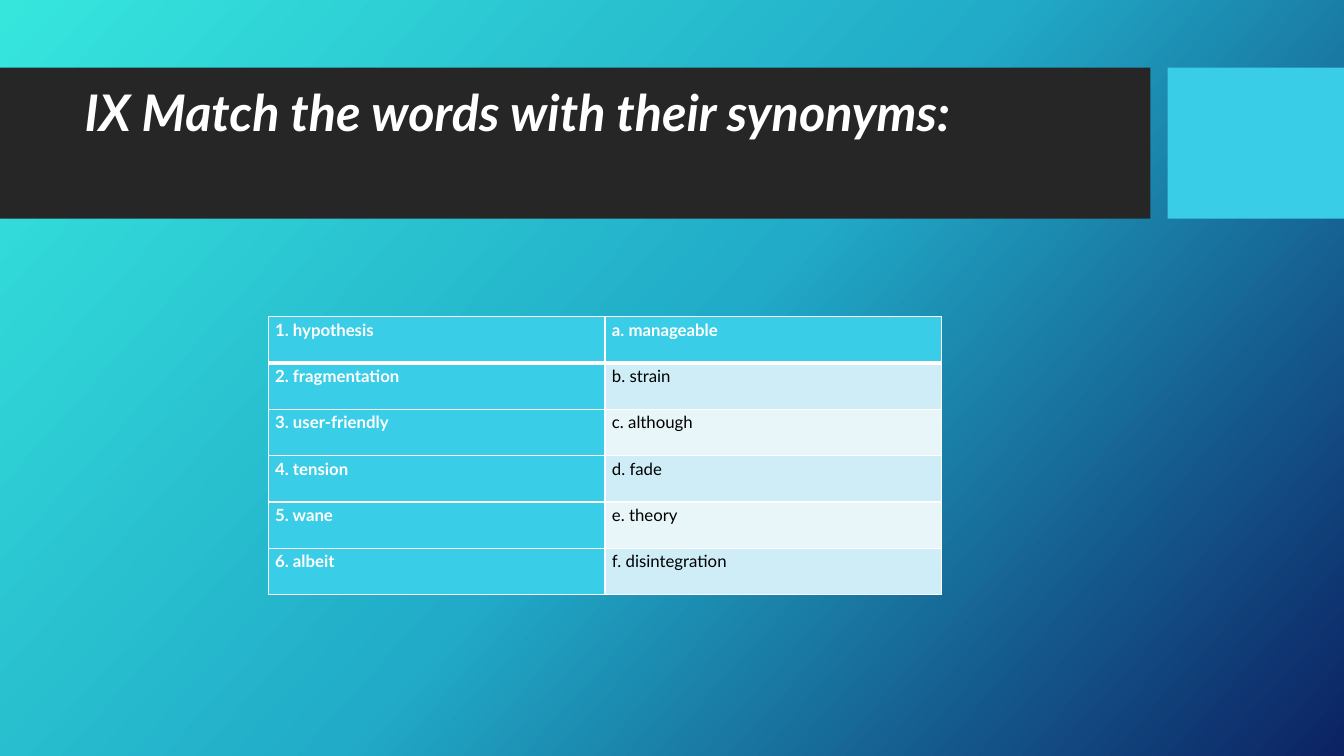
import copy

import pptx
import pptx.dml.color
import pptx.enum.shapes
import pptx.enum.text
import pptx.oxml
import pptx.oxml.ns
import pptx.util

Inches = pptx.util.Inches
FONT = "Lato"
CYAN = "39CDE7"
WHITE = "FFFFFF"
PAIRS = [
    ("1. hypothesis", "a. manageable"),
    ("2. fragmentation", "b. strain"),
    ("3. user-friendly", "c. although"),
    ("4. tension", "d. fade"),
    ("5. wane", "e. theory"),
    ("6. albeit", "f. disintegration"),
]


def rgb(value):
    return pptx.dml.color.RGBColor.from_string(value)


def format_text(p, size, color, bold, spacing, italic=False):
    p.alignment = pptx.enum.text.PP_ALIGN.LEFT
    p.line_spacing = spacing
    p.font.name = FONT
    p.font.size = pptx.util.Pt(size)
    p.font.bold = bold
    p.font.italic = italic
    p.font.color.rgb = rgb(color)


def paint_background(s):
    fill = s.background.fill
    fill.gradient()
    fill.gradient_angle = 318
    stops = s.element.find(".//" + pptx.oxml.ns.qn("a:gsLst"))
    stops.insert(1, copy.deepcopy(stops[0]))
    colors = ["36E6DD", "21ABC8", "0C2263"]
    for stop, position, color in zip(fill.gradient_stops, (0, 0.5, 1), colors):
        stop.position = position
        stop.color.rgb = rgb(color)


def add_block(s, left, top, width, height, color):
    sp = s.shapes.add_shape(
        pptx.enum.shapes.MSO_SHAPE.RECTANGLE,
        Inches(left), Inches(top), Inches(width), Inches(height))
    sp.shadow.inherit = False
    sp.fill.solid()
    sp.fill.fore_color.rgb = rgb(color)
    sp.line.fill.background()
    return sp


def add_header(s, left, top, width, height, text):
    accent, gap = 1.75, 0.17
    band = width - accent - gap
    title = s.shapes.title
    blocks = [
        add_block(s, left, top, band, height, "262626"),
        add_block(s, left + width - accent, top, accent, height, CYAN),
    ]
    for block in blocks:
        title.element.addprevious(block.element)
    title.left, title.top = Inches(left + 0.74), Inches(top + 0.15)
    title.width, title.height = Inches(band - 0.9), Inches(1.18)
    tf = title.text_frame
    tf.text = text
    tf.word_wrap = True
    tf.auto_size = pptx.enum.text.MSO_AUTO_SIZE.NONE
    tf.vertical_anchor = pptx.enum.text.MSO_ANCHOR.TOP
    format_text(tf.paragraphs[0], 36, WHITE, True, 0.9, italic=True)


def set_borders(cell, widths):
    props = cell._tc.get_or_add_tcPr()
    for i, (side, width) in enumerate(widths.items()):
        props.insert(i, pptx.oxml.parse_xml(
            f'<a:{side} {pptx.oxml.ns.nsdecls("a")} w="{pptx.util.Pt(width)}">'
            f'<a:solidFill><a:srgbClr val="{WHITE}"/></a:solidFill></a:{side}>'))


def add_matching_table(s, left, top, width, height, pairs):
    table = s.shapes.add_table(
        len(pairs), 2, Inches(left), Inches(top),
        Inches(width), Inches(height)).table
    for row, pair in enumerate(pairs):
        for col, text in enumerate(pair):
            strong = row == 0 or col == 0
            cell = table.cell(row, col)
            cell.text = text
            cell.margin_left = cell.margin_right = Inches(0.07)
            cell.margin_top = cell.margin_bottom = 0
            cell.vertical_anchor = pptx.enum.text.MSO_ANCHOR.TOP
            cell.fill.solid()
            band = "CEEDF6" if row % 2 else "E8F6FA"
            cell.fill.fore_color.rgb = rgb(CYAN if strong else band)
            format_text(cell.text_frame.paragraphs[0], 12,
                        WHITE if strong else "000000", strong, 1.15)
            set_borders(cell, {"lnL": 1, "lnR": 1,
                               "lnT": 3 if row == 1 else 1,
                               "lnB": 3 if row == 0 else 1})


def main():
    prs = pptx.Presentation()
    prs.slide_width, prs.slide_height = Inches(13.33), Inches(7.5)
    s = prs.slides.add_slide(prs.slide_layouts[5])
    paint_background(s)
    add_header(s, 0, 0.67, 13.33, 1.5, "IX Match the words with their synonyms:")
    add_matching_table(s, 2.66, 3.14, 6.68, 2.76, PAIRS)
    prs.save("out.pptx")


if __name__ == "__main__":
    main()
